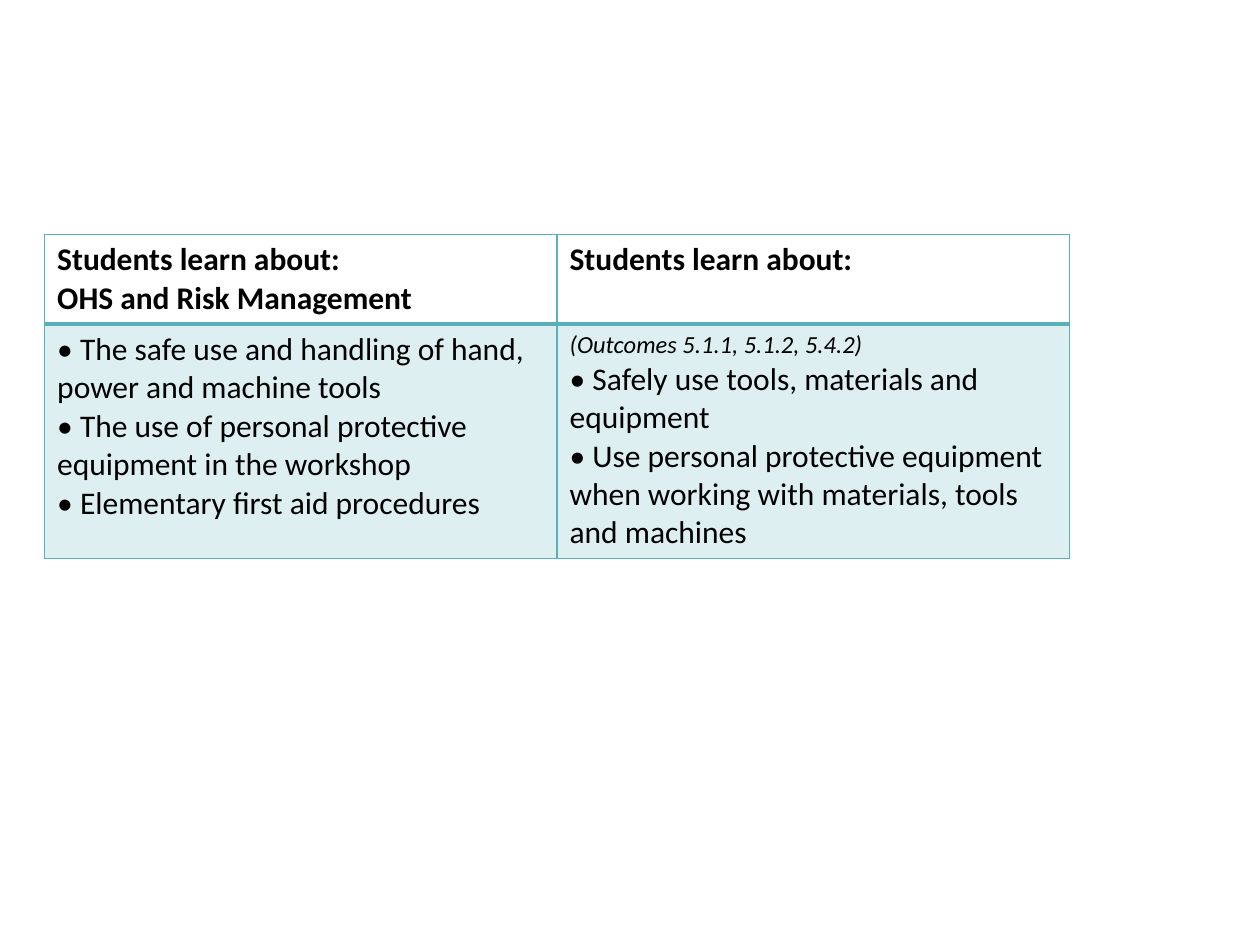
from lxml import etree
from pptx import Presentation
from pptx.dml.color import RGBColor
from pptx.oxml.ns import qn
from pptx.util import Pt

COLORS = {"text": "000000", "teal": "59B0B9"}
BLANK_LAYOUT = 6
BORDER_SIDES = ("L", "R", "T", "B")

HEADINGS = [
    ["Students learn about:", "OHS and Risk Management"],
    ["Students learn about:"],
]
OUTCOMES = "(Outcomes 5.1.1, 5.1.2, 5.4.2)"
CONTENT = [
    [
        "• The safe use and handling of hand, power and machine tools",
        "• The use of personal protective equipment in the workshop",
        "• Elementary first aid procedures",
    ],
    [
        OUTCOMES,
        "• Safely use tools, materials and equipment",
        "• Use personal protective equipment when working with materials, tools and machines",
    ],
]


class SyllabusSlide:
    """Holds the text style and the slide that receives the elements."""

    font_name = "Calibri"
    font_size = 18
    note_size = 14
    tint_percent = 20

    def __init__(self, deck):
        self.slide = deck.slides.add_slide(deck.slide_layouts[BLANK_LAYOUT])

    def table(self, left, top, column_width, row_heights, rows):
        column_count = len(rows[0])
        frame = self.slide.shapes.add_table(
            len(rows), column_count, Pt(left), Pt(top),
            Pt(column_width * column_count), Pt(sum(row_heights)))
        table = frame.table
        table.first_row = table.horz_banding = False
        for column in table.columns:
            column.width = Pt(column_width)
        for index, (height, texts) in enumerate(zip(row_heights, rows)):
            table.rows[index].height = Pt(height)
            for cell, lines in zip(table.rows[index].cells, texts):
                self.cell(cell, lines, is_heading=index == 0)

    def cell(self, cell, lines, is_heading):
        frame = cell.text_frame
        frame.text = "\n".join(lines)
        for para in frame.paragraphs:
            is_note = para.text == OUTCOMES
            font = para.font
            font.name = self.font_name
            font.size = Pt(self.note_size if is_note else self.font_size)
            font.bold = is_heading
            font.italic = is_note
            font.color.rgb = RGBColor.from_string(COLORS["text"])
        self.borders(cell, is_heading)
        if is_heading:
            cell.fill.background()
        else:
            self.tint(cell)

    def borders(self, cell, is_heading):
        """Draw thin borders, with a thicker rule between heading and content."""
        properties = cell._tc.get_or_add_tcPr()
        rule_side = "B" if is_heading else "T"
        for side in BORDER_SIDES:
            width = Pt(2 if side == rule_side else 1)
            line = etree.SubElement(properties, qn(f"a:ln{side}"), w=str(width))
            fill = etree.SubElement(line, qn("a:solidFill"))
            etree.SubElement(fill, qn("a:srgbClr"), val=COLORS["teal"])

    def tint(self, cell):
        """Fill the cell with translucent teal."""
        cell.fill.solid()
        cell.fill.fore_color.rgb = RGBColor.from_string(COLORS["teal"])
        color = cell._tc.tcPr.find(f"{qn('a:solidFill')}/{qn('a:srgbClr')}")
        etree.SubElement(color, qn("a:alpha"), val=str(self.tint_percent * 1000))


def main():
    deck = Presentation()
    deck.slide_width, deck.slide_height = Pt(720), Pt(540)
    page = SyllabusSlide(deck)
    page.table(left=25.5, top=134, column_width=292.8,
               row_heights=(51, 134), rows=(HEADINGS, CONTENT))
    deck.save("out.pptx")


if __name__ == "__main__":
    main()
